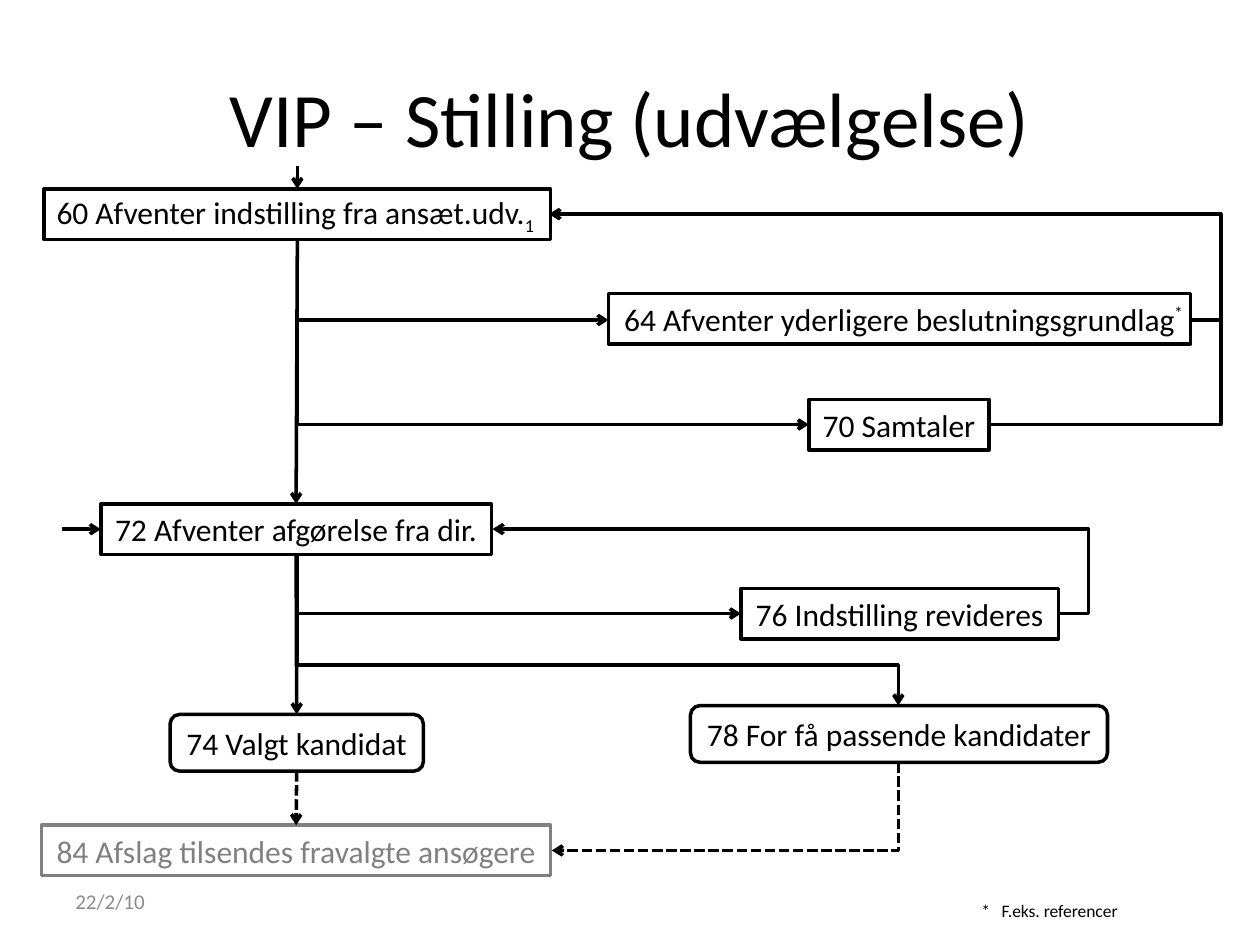
import math
from dataclasses import dataclass
from typing import Optional

from lxml import etree
from pptx import Presentation
from pptx import util as u
from pptx.dml.color import RGBColor
from pptx.enum import dml, shapes, text
from pptx.oxml.ns import qn

BLACK = RGBColor(0x00, 0x00, 0x00)
GREY = RGBColor(0x80, 0x80, 0x80)
DATE_GREY = RGBColor(0x8C, 0x8C, 0x8C)
PROCESS = shapes.MSO_SHAPE.FLOWCHART_PROCESS
OUTCOME = shapes.MSO_SHAPE.FLOWCHART_ALTERNATE_PROCESS
TOP, LEFT, BOTTOM, RIGHT = range(4)
CENTER = text.PP_ALIGN.CENTER
MIDDLE = text.MSO_ANCHOR.MIDDLE
SPINE = 2.36


@dataclass
class Step:
    label: str
    left: float
    top: float
    width: float
    height: float = 0.4
    kind: shapes.MSO_SHAPE = PROCESS
    color: RGBColor = BLACK
    subscript: str = ""


@dataclass
class Arrow:
    start: tuple[float, float]
    end: tuple[float, float]
    source: Optional[int] = None
    target: Optional[int] = None
    side: int = TOP
    dashed: bool = False


@dataclass
class Elbow:
    start: tuple[float, float]
    end: tuple[float, float]
    turn: Optional[float] = None
    down: bool = False
    dashed: bool = False


STEPS = {
    60: Step("60 Afventer indstilling fra ansæt.udv.", 0.35, 1.5, 4.02, subscript="1"),
    64: Step("64 Afventer yderligere beslutningsgrundlag", 4.83, 2.33, 4.62),
    70: Step("70 Samtaler", 6.42, 3.17, 1.43),
    72: Step("72 Afventer afgørelse fra dir.", 0.8, 4, 3.1),
    76: Step("76 Indstilling revideres", 5.88, 4.67, 2.52),
    74: Step("74 Valgt kandidat", 1.35, 5.67, 2.01, 0.45, OUTCOME),
    78: Step("78 For få passende kandidater", 5.48, 5.6, 3.31, 0.45, OUTCOME),
    84: Step("84 Afslag tilsendes fravalgte ansøgere", 0.33, 6.55, 4.04, color=GREY),
}

ARROWS = [
    Arrow((SPINE, 1.32), (SPINE, 1.5), target=60),
    Arrow((0.49, 4.2), (0.8, 4.2), target=72, side=LEFT),
    Arrow((SPINE, 1.9), (SPINE, 4), 60, 72),
    Arrow((SPINE, 4.4), (SPINE, 5.67), 72, 74),
    Arrow((SPINE, 6.12), (SPINE, 6.55), 74, 84, dashed=True),
]

ELBOWS = [
    Elbow((SPINE, 1.9), (4.83, 2.54), down=True),
    Elbow((SPINE, 1.9), (6.42, 3.37), down=True),
    Elbow((SPINE, 4.4), (5.88, 4.87), down=True),
    Elbow((SPINE, 4.4), (7.13, 5.6), turn=5.28, down=True),
    Elbow((7.13, 6.05), (4.38, 6.75), down=True, dashed=True),
    Elbow((9.44, 2.54), (4.36, 1.7), turn=9.69),
    Elbow((7.85, 3.37), (4.36, 1.7), turn=9.69),
    Elbow((8.39, 4.87), (3.91, 4.2), turn=8.64),
]


def write(shape, content: str, *, size: float = 18, color: RGBColor = BLACK,
          align=text.PP_ALIGN.LEFT, anchor=text.MSO_ANCHOR.TOP,
          wrap: bool = False, subscript: str = "", hanging: float = 0) -> None:
    frame = shape.text_frame
    frame.word_wrap = wrap
    frame.vertical_anchor = anchor
    paragraph = frame.paragraphs[0]
    paragraph.alignment = align
    if hanging:
        properties = paragraph._p.get_or_add_pPr()
        properties.set("marL", str(u.Inches(hanging)))
        properties.set("indent", str(-u.Inches(hanging)))
    for part in filter(None, (content, subscript)):
        run = paragraph.add_run()
        run.text = part
        run.font.name = "Calibri"
        run.font.size = u.Pt(size)
        run.font.color.rgb = color
    if subscript:
        run.font._element.set("baseline", "-25000")


def add_text(slide, content: str, left: float, top: float, width: float,
             height: float, **style) -> None:
    box = slide.shapes.add_textbox(*map(u.Inches, (left, top, width, height)))
    write(box, content, **style)


def add_step(slide, step: Step):
    shape = slide.shapes.add_shape(
        step.kind, *map(u.Inches, (step.left, step.top, step.width, step.height)))
    shape.shadow.inherit = False
    shape.fill.background()
    shape.line.color.rgb = step.color
    shape.line.width = u.Pt(2)
    align = text.PP_ALIGN.LEFT if step.subscript else CENTER
    write(shape, step.label, color=step.color, align=align, anchor=MIDDLE,
          subscript=step.subscript)
    return shape


def add_line(slide, kind, start: tuple[float, float], end: tuple[float, float],
             dashed: bool):
    connector = slide.shapes.add_connector(kind, *map(u.Inches, (*start, *end)))
    connector.line.color.rgb = BLACK
    connector.line.width = u.Pt(2)
    if dashed:
        connector.line.dash_style = dml.MSO_LINE.SQUARE_DOT
    properties = connector._element.spPr
    etree.SubElement(properties.find(qn("a:ln")), qn("a:tailEnd"), type="arrow")
    etree.SubElement(properties, qn("a:effectLst"))
    return connector


def add_arrow(slide, arrow: Arrow, steps: dict) -> None:
    connector = add_line(slide, shapes.MSO_CONNECTOR.STRAIGHT, arrow.start,
                         arrow.end, arrow.dashed)
    if arrow.source:
        connector.begin_connect(steps[arrow.source], BOTTOM)
    if arrow.target:
        connector.end_connect(steps[arrow.target], arrow.side)


def add_elbow(slide, elbow: Elbow) -> None:
    (x1, y1), (x2, y2) = start, end = elbow.start, elbow.end
    side = math.copysign(1, x2 - x1)
    if elbow.down:
        middle_x, middle_y = (x1 + x2) / 2, (y1 + y2) / 2
        half_width, half_height = side * (y2 - y1) / 2, abs(x2 - x1) / 2
        start = (middle_x + half_width, middle_y - half_height)
        end = (middle_x - half_width, middle_y + half_height)
    connector = add_line(slide, shapes.MSO_CONNECTOR.ELBOW, start, end, elbow.dashed)
    properties = connector._element.spPr
    geometry = properties.find(qn("a:prstGeom"))
    if elbow.down:
        degrees = 270 if side > 0 else 90
        properties.find(qn("a:xfrm")).set("rot", str(degrees * 60000))
    if elbow.turn is None:
        geometry.set("prst", "bentConnector2")
        return
    first, last = (y1, y2) if elbow.down else (x1, x2)
    ratio = round((elbow.turn - first) / (last - first) * 100000)
    guides = geometry.find(qn("a:avLst"))
    etree.SubElement(guides, qn("a:gd"), name="adj1", fmla=f"val {ratio}")


def main() -> None:
    presentation = Presentation()
    presentation.slide_width = u.Inches(10)
    presentation.slide_height = u.Inches(7.5)
    slide = presentation.slides.add_slide(presentation.slide_layouts[6])
    add_text(slide, "VIP – Stilling (udvælgelse)", 0.5, 0.3, 9, 1.25, size=44,
             align=CENTER, anchor=MIDDLE, wrap=True)
    steps = {number: add_step(slide, step) for number, step in STEPS.items()}
    for arrow in ARROWS:
        add_arrow(slide, arrow, steps)
    for elbow in ELBOWS:
        add_elbow(slide, elbow)
    add_text(slide, "*", 9.22, 2.35, 0.27, 0.27, size=10)
    add_text(slide, "*\tF.eks. referencer", 7.69, 7.09, 2.21, 0.27, size=10,
             wrap=True, hanging=0.16)
    add_text(slide, "22/2/10", 0.5, 6.95, 2.33, 0.4, size=12, color=DATE_GREY,
             anchor=MIDDLE, wrap=True)
    presentation.save("out.pptx")


if __name__ == "__main__":
    main()
